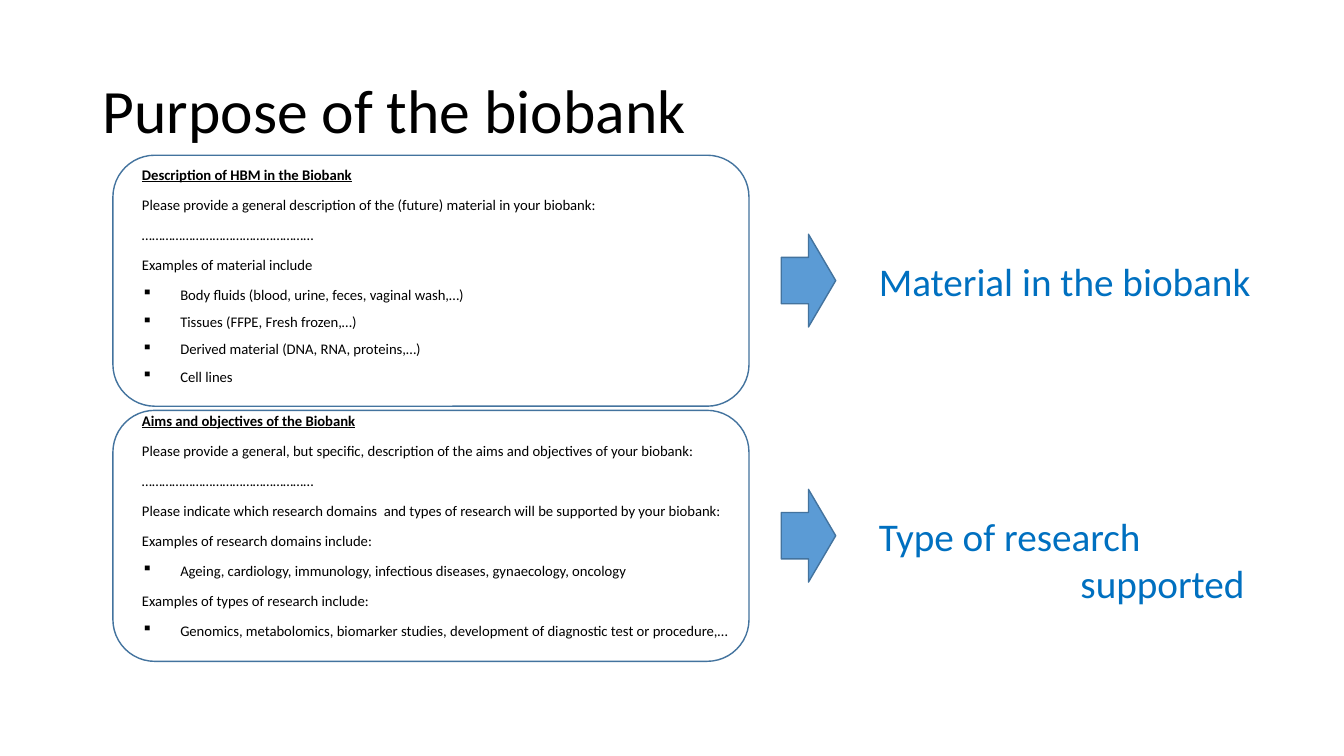
from lxml import etree
from pptx import Presentation
from pptx import util as u
from pptx.dml.color import RGBColor
from pptx.enum import shapes, text
from pptx.oxml import ns

BLACK = RGBColor(0x00, 0x00, 0x00)
LABEL_BLUE = RGBColor(0x00, 0x70, 0xC0)
ARROW_BLUE = RGBColor(0x5B, 0x9B, 0xD5)
OUTLINE_BLUE = RGBColor(0x43, 0x73, 0x9E)

HEADING, PLAIN, BULLET, TIGHT_BULLET = range(4)
DOTS = "……………………………………………"

FORM = [
    (HEADING, "Description of HBM in the Biobank"),
    (PLAIN, "Please provide a general description of the (future) material in your biobank:"),
    (PLAIN, DOTS),
    (PLAIN, "Examples of material include"),
    (TIGHT_BULLET, "Body fluids (blood, urine, feces, vaginal wash,…)"),
    (TIGHT_BULLET, "Tissues (FFPE, Fresh frozen,…)"),
    (TIGHT_BULLET, "Derived material (DNA, RNA, proteins,…)"),
    (TIGHT_BULLET, "Cell lines"),
    (HEADING, "Aims and objectives of the Biobank"),
    (PLAIN, "Please provide a general, but specific, description of the aims and objectives of your biobank:"),
    (PLAIN, DOTS),
    (PLAIN, "Please indicate which research domains  and types of research will be supported by your biobank:"),
    (PLAIN, "Examples of research domains include:"),
    (BULLET, "Ageing, cardiology, immunology, infectious diseases, gynaecology, oncology"),
    (PLAIN, "Examples of types of research include:"),
    (BULLET, "Genomics, metabolomics, biomarker studies, development of diagnostic test or procedure,…"),
]
LABELS = [["Material in the biobank"], ["Type of research", "supported"]]


def write(frame, words, size, color=BLACK, bold=False, underline=False, align=None,
          spacing=None, before=0, after=0, indent=0, bullet=None):
    """Add one formatted paragraph to a text frame."""
    para = frame.paragraphs[0] if not frame.text else frame.add_paragraph()
    para.alignment = align
    para.line_spacing = spacing
    para.space_before, para.space_after = u.Pt(before), u.Pt(after)
    properties = para._p.get_or_add_pPr()
    properties.set("marL", str(u.Inches(indent)))
    if bullet:
        properties.set("indent", str(-u.Inches(indent)))
        etree.SubElement(properties, ns.qn("a:buChar")).set("char", bullet)
    span = para.add_run()
    span.text = words
    font = span.font
    font.name, font.size, font.bold, font.underline = "Calibri", u.Pt(size), bold, underline
    font.color.rgb = color


class Canvas:
    """Draws styled elements on one slide, placed in percent of its size."""

    def __init__(self, deck):
        self.deck = deck
        self.page = deck.slides.add_slide(deck.slide_layouts[6])

    def place(self, left, top, width, height):
        across, down = self.deck.slide_width / 100, self.deck.slide_height / 100
        return int(left * across), int(top * down), int(width * across), int(height * down)

    def box(self, *area, anchor=text.MSO_ANCHOR.TOP):
        frame = self.page.shapes.add_textbox(*self.place(*area)).text_frame
        frame.word_wrap = True
        frame.vertical_anchor = anchor
        return frame

    def shape(self, kind, *area, fill=None):
        shape = self.page.shapes.add_shape(kind, *self.place(*area))
        shape.shadow.inherit = False
        shape.line.color.rgb = OUTLINE_BLUE
        shape.line.width = u.Pt(1)
        if fill is None:
            shape.fill.background()
        else:
            shape.fill.solid()
            shape.fill.fore_color.rgb = fill

    def title(self, words):
        frame = self.box(6.9, 5.33, 86.25, 19.33, anchor=text.MSO_ANCHOR.MIDDLE)
        write(frame, words, 44, spacing=0.9)

    def form(self, entries):
        frame = self.box(9.83, 21.07, 81.9, 64.8)
        for number, (kind, words) in enumerate(entries):
            heading = kind == HEADING
            listed = kind in (BULLET, TIGHT_BULLET)
            write(frame, words, 10.5, bold=heading, underline=heading,
                  align=text.PP_ALIGN.JUSTIFY, spacing=1.07,
                  before=12 if heading and number else 0,
                  after=6 if kind == TIGHT_BULLET else 8,
                  indent=0.38 if listed else 0, bullet="▪" if listed else None)

    def section(self, top, lines):
        self.shape(shapes.MSO_SHAPE.ROUNDED_RECTANGLE, 8.4, top, 47.33, 33.2)
        self.shape(shapes.MSO_SHAPE.RIGHT_ARROW, 58.13, top + 10.45, 4.05, 12.27, fill=ARROW_BLUE)
        frame = self.box(64.65, top + 12.8, 30, 1.3 + 6.3 * len(lines))
        for number, words in enumerate(lines):
            write(frame, words, 28, color=LABEL_BLUE, indent=2 * number)


def main():
    deck = Presentation()
    deck.slide_width, deck.slide_height = u.Inches(13.33), u.Inches(7.5)
    canvas = Canvas(deck)
    canvas.title("Purpose of the biobank")
    canvas.form(FORM)
    for number, lines in enumerate(LABELS):
        canvas.section(20.53 + 33.75 * number, lines)
    deck.save("out.pptx")


if __name__ == "__main__":
    main()
